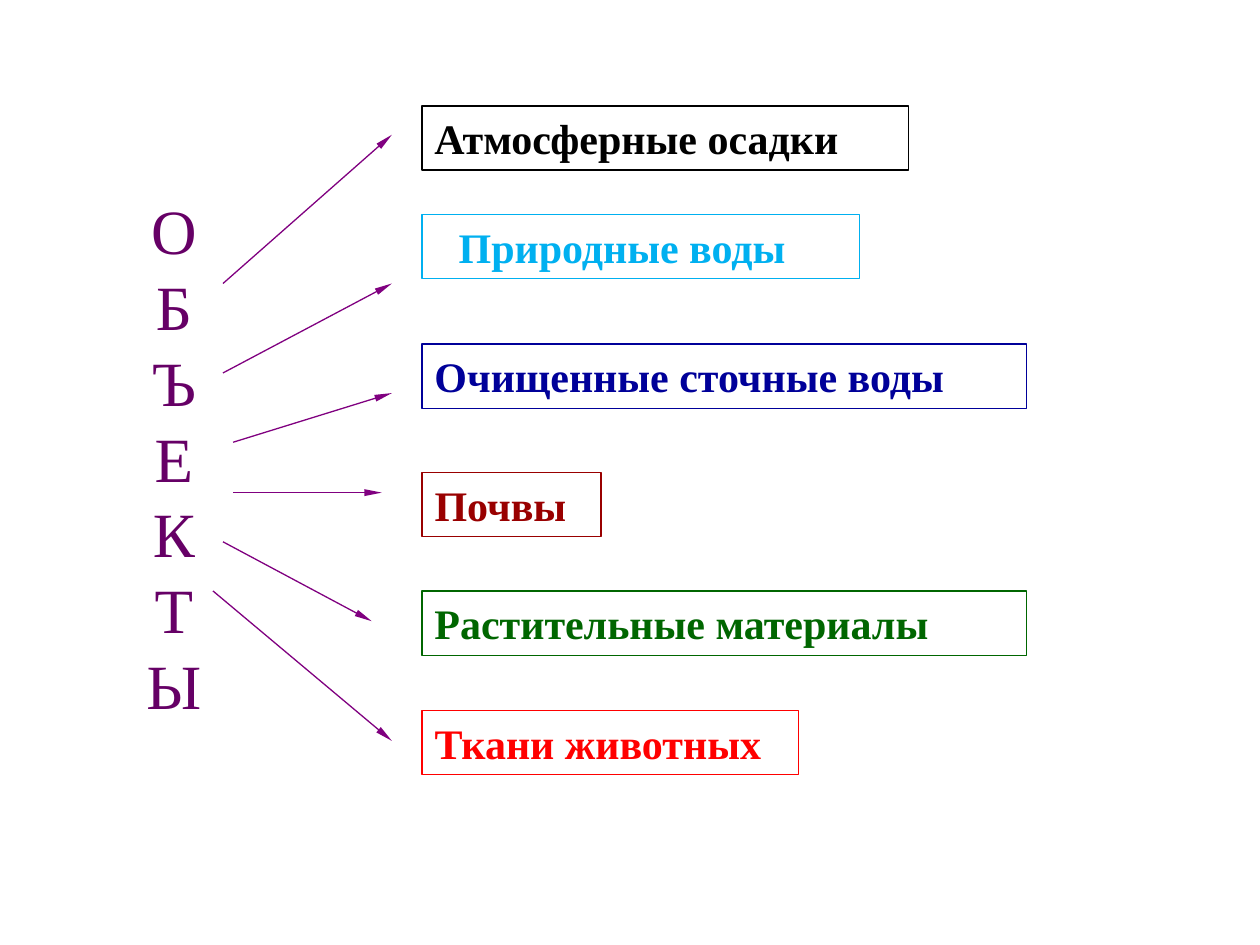
from pptx import Presentation
from pptx.dml.color import RGBColor
from pptx.enum.shapes import MSO_CONNECTOR, MSO_SHAPE
from pptx.enum.text import MSO_ANCHOR, MSO_AUTO_SIZE, PP_ALIGN
from pptx.oxml.ns import qn
from pptx.util import Inches, Pt
from lxml import etree

RECTANGLE = MSO_SHAPE.RECTANGLE
STRAIGHT = MSO_CONNECTOR.STRAIGHT
LEFT, CENTER = PP_ALIGN.LEFT, PP_ALIGN.CENTER
TOP, MIDDLE = MSO_ANCHOR.TOP, MSO_ANCHOR.MIDDLE
NO_AUTOFIT = MSO_AUTO_SIZE.NONE

TITLE_ONLY_LAYOUT = 5
FONT = "Times New Roman"
TITLE_COLOR = "660066"
ARROW_COLOR = "800080"
LINE_WIDTH = 0.75
BOX_LEFT, BOX_HEIGHT = 3.35, 0.51
MARGIN = 0.1

# Text, top, width, color, extra indent of the text
OBJECTS = [
    ("Атмосферные осадки", 0.84, 3.86, "000000", 0),
    ("Природные воды", 1.7, 3.47, "00B0F0", 0.19),
    ("Очищенные сточные воды", 2.73, 4.8, "000099", 0),
    ("Почвы", 3.75, 1.42, "990000", 0),
    ("Растительные материалы", 4.69, 4.8, "006600", 0),
    ("Ткани животных", 5.64, 2.99, "FF0000", 0),
]

# Start and end of each arrow, from top to bottom
ARROWS = [
    ((1.77, 2.25), (3.11, 1.07)),
    ((1.77, 2.96), (3.11, 2.25)),
    ((1.85, 3.51), (3.11, 3.12)),
    ((1.85, 3.91), (3.03, 3.91)),
    ((1.77, 4.3), (2.95, 4.93)),
    ((1.69, 4.69), (3.11, 5.88)),
]


def color_of(hex_string):
    return RGBColor.from_string(hex_string)


def write_text(shape, text, *, size, color, bold=False, align=LEFT,
               anchor=MIDDLE, margin_left=MARGIN, margin_right=MARGIN,
               line_spacing=None):
    frame = shape.text_frame
    frame.text = text
    frame.word_wrap = True
    frame.auto_size = NO_AUTOFIT
    frame.vertical_anchor = anchor
    frame.margin_left, frame.margin_right = Inches(margin_left), Inches(margin_right)
    frame.margin_top = frame.margin_bottom = Inches(0.05)
    for paragraph in frame.paragraphs:
        paragraph.alignment = align
        if line_spacing:
            paragraph.line_spacing = Pt(line_spacing)
        for run in paragraph.runs:
            run.font.name = FONT
            run.font.size = Pt(size)
            run.font.bold = bold
            run.font.color.rgb = color_of(color)


def format_line(line, color):
    line.color.rgb = color_of(color)
    line.width = Pt(LINE_WIDTH)


def add_vertical_title(slide):
    """Place the title as a column of letters, one on each line."""
    title = slide.shapes.title
    title.left, title.top = Inches(1.06), Inches(1.47)
    title.width, title.height = Inches(0.64), Inches(4.31)
    write_text(title, "О\vБ\nЪ\nЕ\nК\nТ\nЫ", size=36, color=TITLE_COLOR,
               align=CENTER, anchor=TOP, margin_left=0, margin_right=0,
               line_spacing=43.3)


def add_object_box(slide, text, top, width, color, indent):
    box = slide.shapes.add_shape(RECTANGLE, Inches(BOX_LEFT), Inches(top),
                                 Inches(width), Inches(BOX_HEIGHT))
    box.shadow.inherit = False
    box.fill.background()
    format_line(box.line, color)
    write_text(box, text, size=24, color=color, bold=True,
               margin_left=MARGIN + indent)


def add_arrow(slide, start, end):
    points = [Inches(value) for value in (*start, *end)]
    arrow = slide.shapes.add_connector(STRAIGHT, *points)
    format_line(arrow.line, ARROW_COLOR)
    etree.SubElement(arrow.line._get_or_add_ln(), qn("a:tailEnd"),
                     type="triangle", w="sm", len="lg")
    etree.SubElement(arrow._element.spPr, qn("a:effectLst"))


def main():
    presentation = Presentation()
    presentation.slide_width, presentation.slide_height = Inches(10), Inches(7.5)
    layout = presentation.slide_layouts[TITLE_ONLY_LAYOUT]
    slide = presentation.slides.add_slide(layout)
    add_vertical_title(slide)
    for item in OBJECTS:
        add_object_box(slide, *item)
    for start, end in ARROWS:
        add_arrow(slide, start, end)
    presentation.save("out.pptx")


if __name__ == "__main__":
    main()
